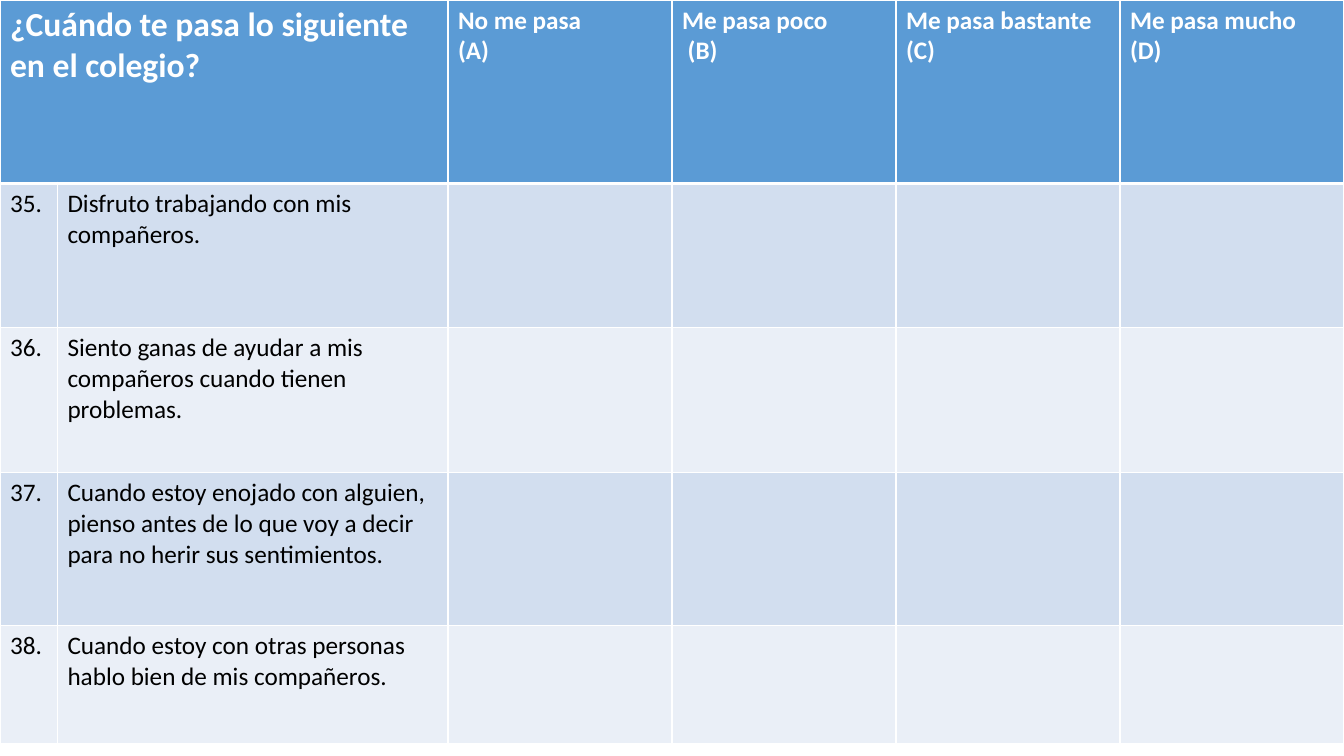
"""Build a school survey slide: one table of statements and four answer columns."""
from pptx import Presentation
from pptx import util as u
from pptx.dml.color import RGBColor
from pptx.oxml import parse_xml
from pptx.oxml.ns import nsdecls

WHITE, BLACK, BLUE = "FFFFFF", "000000", "5B9BD5"
BANDS = ["D2DEEF", "EAEFF7"]
TITLE = "¿Cuándo te pasa lo siguiente en el colegio?"
HEADS = [
    ["No me pasa", "(A)"],
    ["Me pasa poco", " (B)"],
    ["Me pasa bastante", "(C)"],
    ["Me pasa mucho", "(D)"],
]
ITEMS = [
    "Disfruto trabajando con mis compañeros.",
    "Siento ganas de ayudar a mis compañeros cuando tienen problemas.",
    "Cuando estoy enojado con alguien, pienso antes de lo que voy a decir "
    "para no herir sus sentimientos.",
    "Cuando estoy con otras personas hablo bien de mis compañeros.",
]
FIRST = 35
HIGHS = [1.82, 1.43, 1.44, 1.52, 1.17]


def color(code):
    return RGBColor.from_string(code)


def write(cell, lines, size, ink, bold):
    frame = cell.text_frame
    for n, line in enumerate(lines):
        para = frame.add_paragraph() if n else frame.paragraphs[0]
        run = para.add_run()
        run.text = line
        run.font.name = "Calibri"
        run.font.size = u.Pt(size)
        run.font.bold = bold
        run.font.color.rgb = color(ink)


deck = Presentation()
deck.slide_width, deck.slide_height = u.Inches(13.33), u.Inches(7.5)
slide = deck.slides.add_slide(deck.slide_layouts[6])

wide = deck.slide_width
grid = slide.shapes.add_table(
    len(HIGHS), 2 + len(HEADS), 0, 0, wide, u.Inches(sum(HIGHS))
).table
slot = wide // 6
grid.columns[0].width = u.Inches(0.57)
grid.columns[1].width = 2 * slot - u.Inches(0.57)
for c in range(2, 6):
    grid.columns[c].width = slot

for r, high in enumerate(HIGHS):
    grid.rows[r].height = u.Inches(high)
    for cell in grid.rows[r].cells:
        cell.fill.solid()
        cell.fill.fore_color.rgb = color(BANDS[(r - 1) % 2] if r else BLUE)
        props = cell._tc.get_or_add_tcPr()
        for n, side in enumerate("LRTB"):
            thick = (r, side) in [(0, "B"), (1, "T")]
            props.insert(n, parse_xml(
                f'<a:ln{side} {nsdecls("a")} w="{u.Pt(3 if thick else 1)}">'
                f'<a:solidFill><a:srgbClr val="{WHITE}"/></a:solidFill></a:ln{side}>'
            ))

grid.cell(0, 0).merge(grid.cell(0, 1))
write(grid.cell(0, 0), [TITLE], 24, WHITE, True)
for c, lines in enumerate(HEADS, 2):
    write(grid.cell(0, c), lines, 18, WHITE, True)
for r, item in enumerate(ITEMS, 1):
    write(grid.cell(r, 0), [f"{FIRST + r - 1}."], 18, BLACK, False)
    write(grid.cell(r, 1), [item], 18, BLACK, False)

deck.save("out.pptx")
